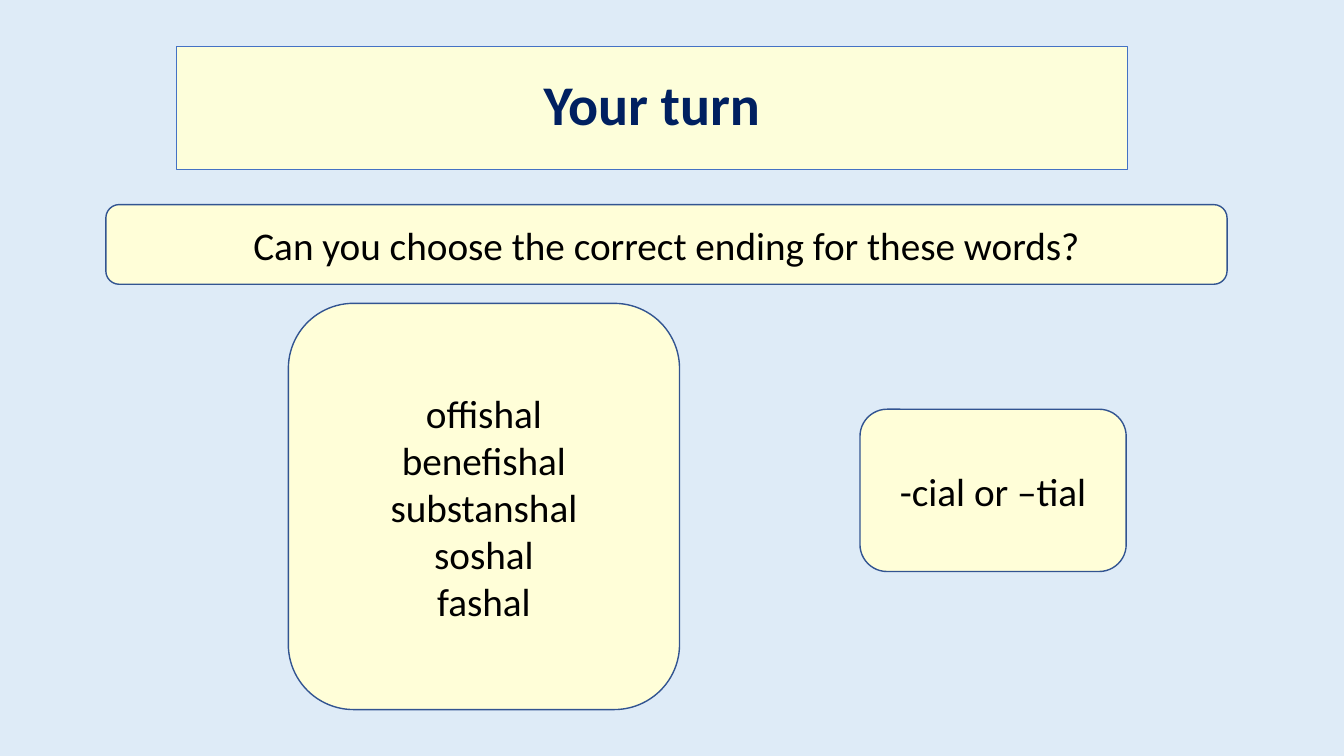
from dataclasses import dataclass

from pptx import Presentation
from pptx import util as u
from pptx.dml import color
from pptx.enum import shapes, text

COLOURS = {
    "background": "DEEBF7",
    "title_fill": "FDFEDA",
    "title_line": "4472C4",
    "title_text": "002060",
    "card_fill": "FFFED8",
    "card_line": "325491",
    "card_text": "000000",
}
FONT = "Calibri"


@dataclass
class Card:
    left: float
    top: float
    width: float
    height: float
    lines: list[str]


CARDS = [
    Card(1.05, 2.03, 11.12, 0.79, ["Can you choose the correct ending for these words?"]),
    Card(2.86, 3.01, 3.88, 4.03, ["offishal", "benefishal", "substanshal", "soshal", "fashal"]),
    Card(8.53, 4.06, 2.64, 1.61, ["-cial or –tial"]),
]


def rgb(name: str) -> color.RGBColor:
    return color.RGBColor.from_string(COLOURS[name])


def style_box(box, role: str, line_width: float, size: int, bold: bool) -> None:
    """Apply fill, outline and centred text in the colours of a role."""
    box.fill.solid()
    box.fill.fore_color.rgb = rgb(f"{role}_fill")
    box.line.color.rgb = rgb(f"{role}_line")
    box.line.width = u.Pt(line_width)
    box.text_frame.word_wrap = True
    box.text_frame.vertical_anchor = text.MSO_ANCHOR.MIDDLE
    for paragraph in box.text_frame.paragraphs:
        paragraph.alignment = text.PP_ALIGN.CENTER
        for run in paragraph.runs:
            run.font.name = FONT
            run.font.size = u.Pt(size)
            run.font.bold = bold
            run.font.color.rgb = rgb(f"{role}_text")


def draw_card(slide, card: Card) -> None:
    box = slide.shapes.add_shape(
        shapes.MSO_SHAPE.ROUNDED_RECTANGLE,
        u.Inches(card.left), u.Inches(card.top),
        u.Inches(card.width), u.Inches(card.height),
    )
    box.shadow.inherit = False
    box.text_frame.text = "\n".join(card.lines)
    style_box(box, "card", 1, 28, False)


def draw_title(slide, heading: str) -> None:
    title = slide.shapes.title
    title.left, title.top = u.Inches(1.75), u.Inches(0.46)
    title.width, title.height = u.Inches(9.43), u.Inches(1.22)
    title.text_frame.text = heading
    style_box(title, "title", 0.75, 40, True)
    title.text_frame.paragraphs[0].line_spacing = 0.9


def main() -> None:
    deck = Presentation()
    deck.slide_width, deck.slide_height = u.Inches(13.33), u.Inches(7.5)
    slide = deck.slides.add_slide(deck.slide_layouts.get_by_name("Title Only"))

    # Background
    slide.background.fill.solid()
    slide.background.fill.fore_color.rgb = rgb("background")

    # Title, then the question, words and endings
    draw_title(slide, "Your turn")
    for card in CARDS:
        draw_card(slide, card)

    deck.save("out.pptx")


if __name__ == "__main__":
    main()
